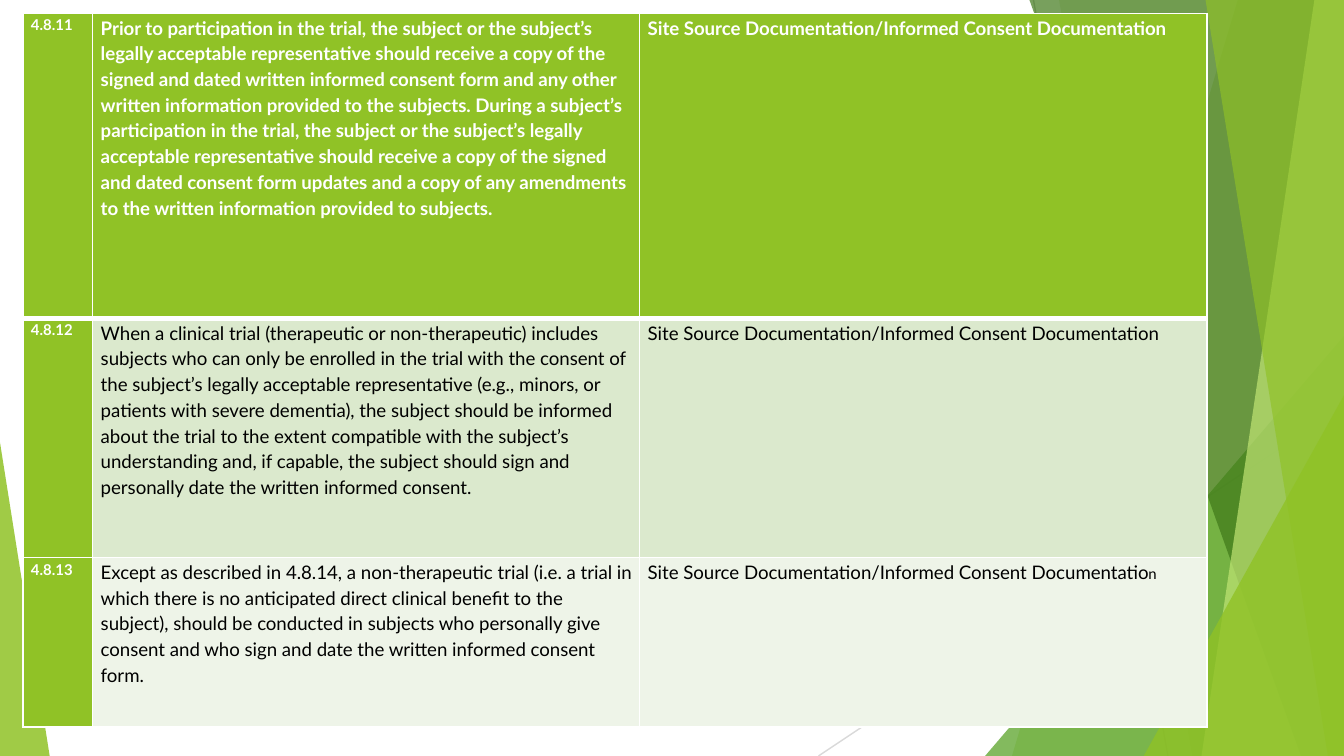
from lxml import etree
from pptx import Presentation
from pptx.dml.color import RGBColor
from pptx.enum.shapes import MSO_CONNECTOR, MSO_SHAPE
from pptx.oxml.ns import qn
from pptx.util import Inches, Pt

LINE = MSO_CONNECTOR.STRAIGHT
TRIANGLE = MSO_SHAPE.ISOSCELES_TRIANGLE

THEME = {
    "font": "Lato", "small": 8, "body": 10, "spacing": 1.15,
    "green": "90C226", "white": "FFFFFF", "black": "000000",
    "bands": ["90C226", "DBE9CD", "EEF4E8"],
    "rule": 1, "head_rule": 3, "hairline": 0.75,
}
WIDE = 10
HIGH = WIDE * 9 / 16

SITE = "Site Source Documentation/Informed Consent Documentation"
ROWS = [
    ("4.8.11",
     "Prior to participation in the trial, the subject or the subject’s legally "
     "acceptable representative should receive a copy of the signed and dated "
     "written informed consent form and any other written information provided "
     "to the subjects. During a subject’s participation in the trial, the subject "
     "or the subject’s legally acceptable representative should receive a copy of "
     "the signed and dated consent form updates and a copy of any amendments to "
     "the written information provided to subjects.",
     SITE),
    ("4.8.12",
     "When a clinical trial (therapeutic or non-therapeutic) includes subjects who "
     "can only be enrolled in the trial with the consent of the subject’s legally "
     "acceptable representative (e.g., minors, or patients with severe dementia), "
     "the subject should be informed about the trial to the extent compatible with "
     "the subject’s understanding and, if capable, the subject should sign and "
     "personally date the written informed consent.",
     SITE),
    ("4.8.13",
     "Except as described in 4.8.14, a non-therapeutic trial (i.e. a trial in which "
     "there is no anticipated direct clinical benefit to the subject), should be "
     "conducted in subjects who personally give consent and who sign and date the "
     "written informed consent form.",
     SITE),
]
COLS = [0.52, 4.07, 4.22]
HEIGHTS = [2.27, 1.78, 1.26]
LEFT, TOP = 0.17, 0.1

# x1, y1, x2, y2, colour
RAYS = [(7.69, 0, 8.69, HIGH, "BFBFBF"), (10, 3.02, 6.09, HIGH, "D9D9D9")]
# Bands run to the right edge: x at top, x at bottom, colour, opacity.
# Wedges stand on the bottom edge: left, top, width, peak, colour, opacity.
FACETS = [
    ("band", 9.21, 7.53, "90C226", 30),
    ("band", 7.88, 8.87, "90C226", 20),
    ("wedge", 7.33, 2.5, 2.67, 1, "54A021", 72),
    ("band", 7.66, 9.68, "3F7819", 70),
    ("band", 9.78, 8.94, "C0E474", 70),
    ("band", 8.97, 9.88, "90C226", 65),
    ("wedge", 8.51, 2.94, 1.49, 1, "90C226", 80),
    ("wedge", 0, 3.29, 0.37, 0, "90C226", 85),
]


def rgb(code):
    return RGBColor.from_string(code)


def add_ray(shapes, x1, y1, x2, y2, color):
    ray = shapes.add_connector(LINE, *map(Inches, (x1, y1, x2, y2)))
    ray.line.color.rgb = rgb(color)
    ray.line.width = Pt(THEME["hairline"])
    etree.SubElement(ray._element.spPr, qn("a:effectLst"))


def band(shapes, top, base):
    path = shapes.build_freeform(Inches(top), 0)
    corners = [(WIDE, 0), (WIDE, HIGH), (base, HIGH)]
    path.add_line_segments([(Inches(x), Inches(y)) for x, y in corners])
    return path.convert_to_shape()


def wedge(shapes, left, top, width, peak):
    shape = shapes.add_shape(
        TRIANGLE, *map(Inches, (left, top, width, HIGH - top)))
    shape.adjustments[0] = peak
    return shape


def add_facet(shapes, kind, *args):
    *place, color, alpha = args
    shape = {"band": band, "wedge": wedge}[kind](shapes, *place)
    shape.shadow.inherit = False
    shape.line.fill.background()
    shape.fill.solid()
    shape.fill.fore_color.rgb = rgb(color)
    tone = shape._element.spPr.find(qn("a:solidFill"))[0]
    etree.SubElement(tone, qn("a:alpha"), val=str(alpha * 1000))


def add_border(cell, side, width):
    props = cell._tc.get_or_add_tcPr()
    line = etree.SubElement(props, qn("a:ln" + side), w=str(Pt(width)))
    fill = etree.SubElement(line, qn("a:solidFill"))
    etree.SubElement(fill, qn("a:srgbClr"), val=THEME["white"])


def fill_cell(cell, text, row, col):
    head, label = row == 0, col == 0
    cell.margin_left = cell.margin_right = Inches(0.06)
    cell.margin_top = cell.margin_bottom = 0
    thick = {0: "B", 1: "T"}.get(row)
    for side in "LRTB":
        add_border(cell, side, THEME["head_rule" if side == thick else "rule"])
    cell.fill.solid()
    cell.fill.fore_color.rgb = rgb(THEME["green"] if label else THEME["bands"][row])
    para = cell.text_frame.paragraphs[0]
    para.line_spacing = THEME["spacing"]
    font = para.font
    font.name = THEME["font"]
    font.size = Pt(THEME["small" if label else "body"])
    font.bold = head or label
    font.color.rgb = rgb(THEME["white" if head or label else "black"])
    para.add_run().text = text
    return para


def add_grid(shapes):
    size = (LEFT, TOP, sum(COLS), sum(HEIGHTS))
    frame = shapes.add_table(len(ROWS), len(COLS), *map(Inches, size))
    table = frame.table
    for col, width in zip(table.columns, COLS):
        col.width = Inches(width)
    for row, height in zip(table.rows, HEIGHTS):
        row.height = Inches(height)
    for r, texts in enumerate(ROWS):
        for c, text in enumerate(texts):
            para = fill_cell(table.cell(r, c), text, r, c)
    # The closing letter of the last cell is set small.
    para.runs[0].text = text[:-1]
    tail = para.add_run()
    tail.text = text[-1]
    tail.font.size = Pt(THEME["small"])


def main():
    deck = Presentation()
    deck.slide_width, deck.slide_height = Inches(WIDE), Inches(HIGH)
    shapes = deck.slides.add_slide(deck.slide_layouts[6]).shapes
    for ray in RAYS:
        add_ray(shapes, *ray)
    for facet in FACETS:
        add_facet(shapes, *facet)
    add_grid(shapes)
    deck.save("out.pptx")


if __name__ == "__main__":
    main()
